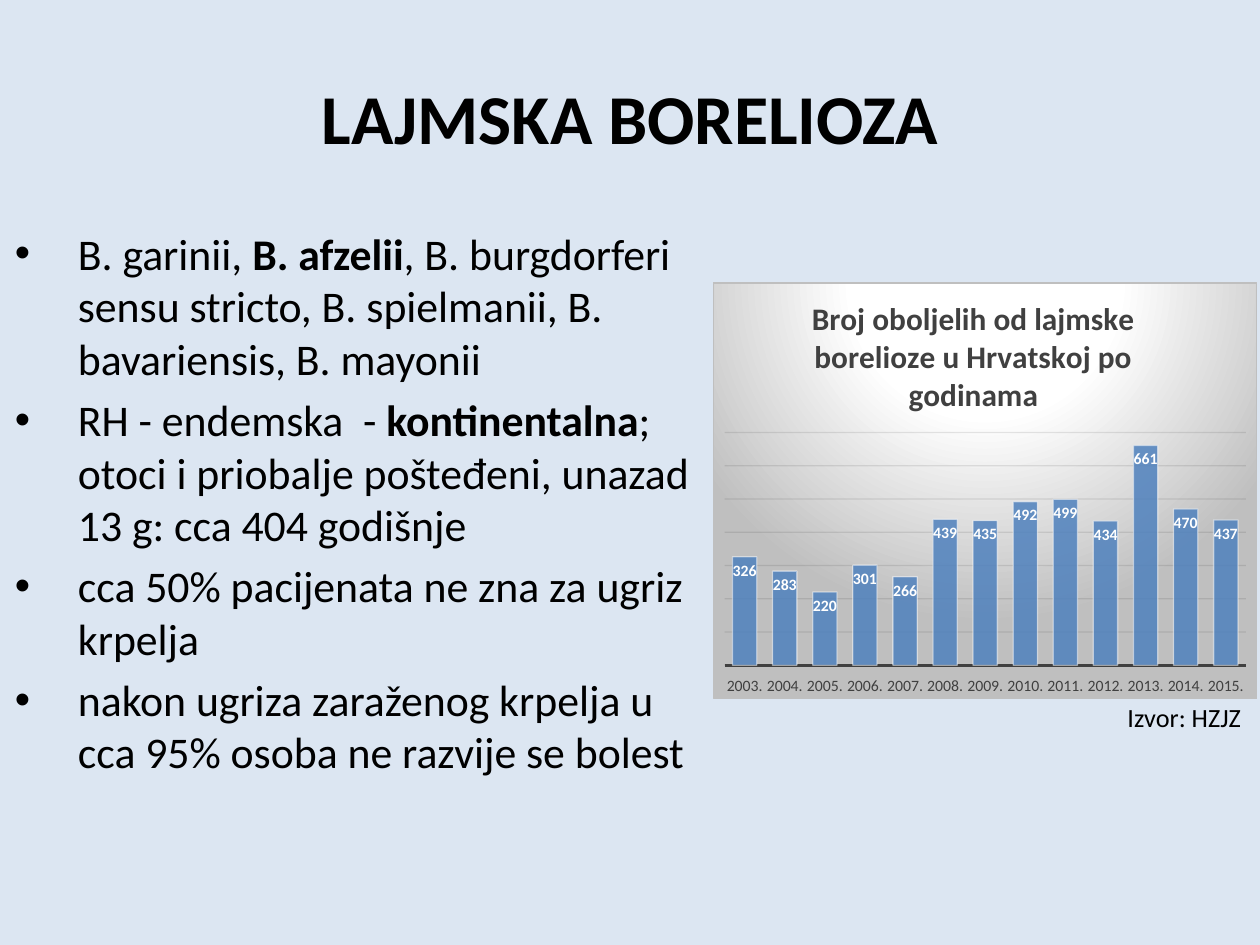
from dataclasses import dataclass
from lxml import etree
from pptx import Presentation
from pptx.chart.data import CategoryChartData
from pptx.dml.color import RGBColor
from pptx.enum.chart import XL_CHART_TYPE, XL_LABEL_POSITION, XL_TICK_LABEL_POSITION, XL_TICK_MARK
from pptx.enum.text import MSO_ANCHOR, PP_ALIGN
from pptx.oxml import parse_xml
from pptx.oxml.ns import nsdecls, qn
from pptx.util import Inches, Pt

COLUMN = XL_CHART_TYPE.COLUMN_CLUSTERED
INSIDE = XL_LABEL_POSITION.INSIDE_END
LOW = XL_TICK_LABEL_POSITION.LOW
NONE = XL_TICK_MARK.NONE
TOP, MIDDLE = MSO_ANCHOR.TOP, MSO_ANCHOR.MIDDLE
LEFT, CENTER = PP_ALIGN.LEFT, PP_ALIGN.CENTER
FACE = "Calibri"
CASES = [326, 283, 220, 301, 266, 439, 435, 492, 499, 434, 661, 470, 437]


@dataclass
class Box:
    """Place, text and format of one text box; each line is a list of (text, bold) runs."""
    at: tuple
    lines: list
    size: int
    align: int = LEFT
    anchor: int = TOP
    bullet: bool = False
    wrap: bool = True


TEXTS = [
    Box((0.5, 0.3, 9, 1.25), [[("LAJMSKA BORELIOZA", True)]], 40, CENTER, MIDDLE),
    Box((0.02, 1.75, 5.65, 5.75), [
        [("B. garinii, ", False), ("B. afzelii", True),
         (", B. burgdorferi sensu stricto, B. spielmanii, B. bavariensis, B. mayonii", False)],
        [("RH - endemska  - ", False), ("kontinentalna", True),
         ("; otoci i priobalje pošteđeni, unazad 13 g: cca 404 godišnje", False)],
        [("cca 50% pacijenata ne zna za ugriz krpelja", False)],
        [("nakon ugriza zaraženog krpelja u cca 95% osoba ne razvije se bolest", False)],
    ], 25, bullet=True),
    Box((8.85, 5.52, 1.16, 0.35), [[("Izvor: HZJZ", False)]], 15, wrap=False),
]


def paint(code: str) -> RGBColor:
    """Turn a hex string into a colour."""
    return RGBColor.from_string(code)


def style(font, size: float, code: str, bold: bool = False) -> None:
    """Set face, size, weight and colour of a font."""
    for key, value in {"name": FACE, "size": Pt(size), "bold": bold}.items():
        setattr(font, key, value)
    font.color.rgb = paint(code)


def stroke(line, code: str, width: float) -> None:
    """Set colour and width of a line."""
    line.color.rgb = paint(code)
    line.width = Pt(width)


def fade(node, *shares: int) -> None:
    """Set the opacity, in percent, of the colours in a node in their order."""
    for color, share in zip(node.iter(qn("a:srgbClr")), shares):
        etree.SubElement(color, qn("a:alpha")).set("val", str(share * 1000))


def dot(para) -> None:
    """Give a paragraph a hanging bullet."""
    para.space_before = Pt(5)
    props = para._p.get_or_add_pPr()
    props.set("marL", str(Inches(0.5)))
    props.set("indent", str(Inches(-0.5)))
    etree.SubElement(props, qn("a:buFont")).set("typeface", "Arial")
    etree.SubElement(props, qn("a:buChar")).set("char", "•")


def write(slide, box: Box) -> None:
    """Draw one text box."""
    frame = slide.shapes.add_textbox(*map(Inches, box.at)).text_frame
    frame.word_wrap = box.wrap
    frame.vertical_anchor = box.anchor
    for index, line in enumerate(box.lines):
        para = frame.paragraphs[0] if index == 0 else frame.add_paragraph()
        para.alignment = box.align
        if box.bullet:
            dot(para)
        for text, bold in line:
            run = para.add_run()
            run.text = text
            style(run.font, box.size, "000000", bold)


def layout(x: float, y: float, size: tuple = ()) -> etree._Element:
    """Make a manual chart layout; a size makes it one for the inner plot."""
    parts = {"layoutTarget": "inner"} if size else {}
    parts |= {"xMode": "edge", "yMode": "edge", "x": x, "y": y}
    parts |= dict(zip("wh", size))
    body = "".join(f'<c:{key} val="{value}"/>' for key, value in parts.items())
    return parse_xml(f'<c:layout {nsdecls("c")}><c:manualLayout>{body}</c:manualLayout></c:layout>')


def place(node, new, after: str = "") -> None:
    """Put a layout in a node in place of any old one."""
    for old in node.findall(qn("c:layout")):
        node.remove(old)
    if after:
        node.find(qn(after)).addnext(new)
    else:
        node.insert(0, new)


def back(chart) -> None:
    """Fill the chart area with a round gradient and give it a border."""
    stops = "".join(f'<a:gs pos="{pos * 1000}"><a:srgbClr val="{code}"/></a:gs>'
                    for pos, code in ((0, "FFFFFF"), (39, "FFFFFF"), (100, "BFBFBF")))
    area = parse_xml(
        f'<c:spPr {nsdecls("c", "a")}><a:gradFill><a:gsLst>{stops}</a:gsLst>'
        '<a:path path="circle"><a:fillToRect l="50000" t="-80000" r="50000" b="180000"/></a:path>'
        '</a:gradFill><a:ln w="9525"><a:solidFill><a:srgbClr val="BFBFBF"/></a:solidFill></a:ln></c:spPr>')
    chart._chartSpace.find(qn("c:chart")).addnext(area)


def plot(slide) -> None:
    """Draw the column chart of cases by year."""
    data = CategoryChartData()
    data.categories = [f"{2003 + step}." for step in range(len(CASES))]
    data.add_series("Broj oboljelih", CASES)
    chart = slide.shapes.add_chart(COLUMN, *map(Inches, (5.66, 2.24, 4.32, 3.31)), data).chart
    style(chart.font, 10, "000000")
    back(chart)
    chart.has_legend = False
    title = chart.chart_title
    para = title.text_frame.paragraphs[0]
    run = para.add_run()
    run.text = "Broj oboljelih od lajmske borelioze u Hrvatskoj po godinama"
    style(run.font, 18, "404040", True)
    place(title._element, layout(0.17, 0.02), "c:tx")
    title.include_in_layout = False
    place(chart._chartSpace.chart.plotArea, layout(0.02, 0.36, (0.96, 0.56)))

    years, scale = chart.category_axis, chart.value_axis
    for axis, form in (
        (years, {"major_tick_mark": NONE, "tick_label_position": LOW, "has_major_gridlines": False}),
        (scale, {"visible": False, "has_major_gridlines": True, "minimum_scale": 0,
                 "maximum_scale": 700, "major_unit": 100}),
    ):
        for key, value in form.items():
            setattr(axis, key, value)
    style(years.tick_labels.font, 9, "404040")
    stroke(years.format.line, "404040", 1.5)
    stroke(scale.major_gridlines.format.line, "0D0D0D", 0.75)
    fade(scale._element.find(qn("c:majorGridlines")), 10)

    bars = chart.plots[0]
    for key, value in {"gap_width": 65, "vary_by_categories": False, "has_data_labels": True}.items():
        setattr(bars, key, value)
    labels = bars.data_labels
    labels.show_value = True
    labels.position = INSIDE
    style(labels.font, 9, "FFFFFF", True)
    look = bars.series[0].format
    look.fill.solid()
    look.fill.fore_color.rgb = paint("4F81BD")
    stroke(look.line, "FFFFFF", 0.75)
    fade(bars.series[0]._element.find(qn("c:spPr")), 85, 50)


def main() -> None:
    """Build and save the slide."""
    deck = Presentation()
    deck.slide_width, deck.slide_height = Inches(10), Inches(7.5)
    slide = deck.slides.add_slide(deck.slide_layouts[6])
    slide.background.fill.solid()
    slide.background.fill.fore_color.rgb = paint("DCE6F2")
    for box in TEXTS:
        write(slide, box)
    plot(slide)
    deck.save("out.pptx")


if __name__ == "__main__":
    main()
